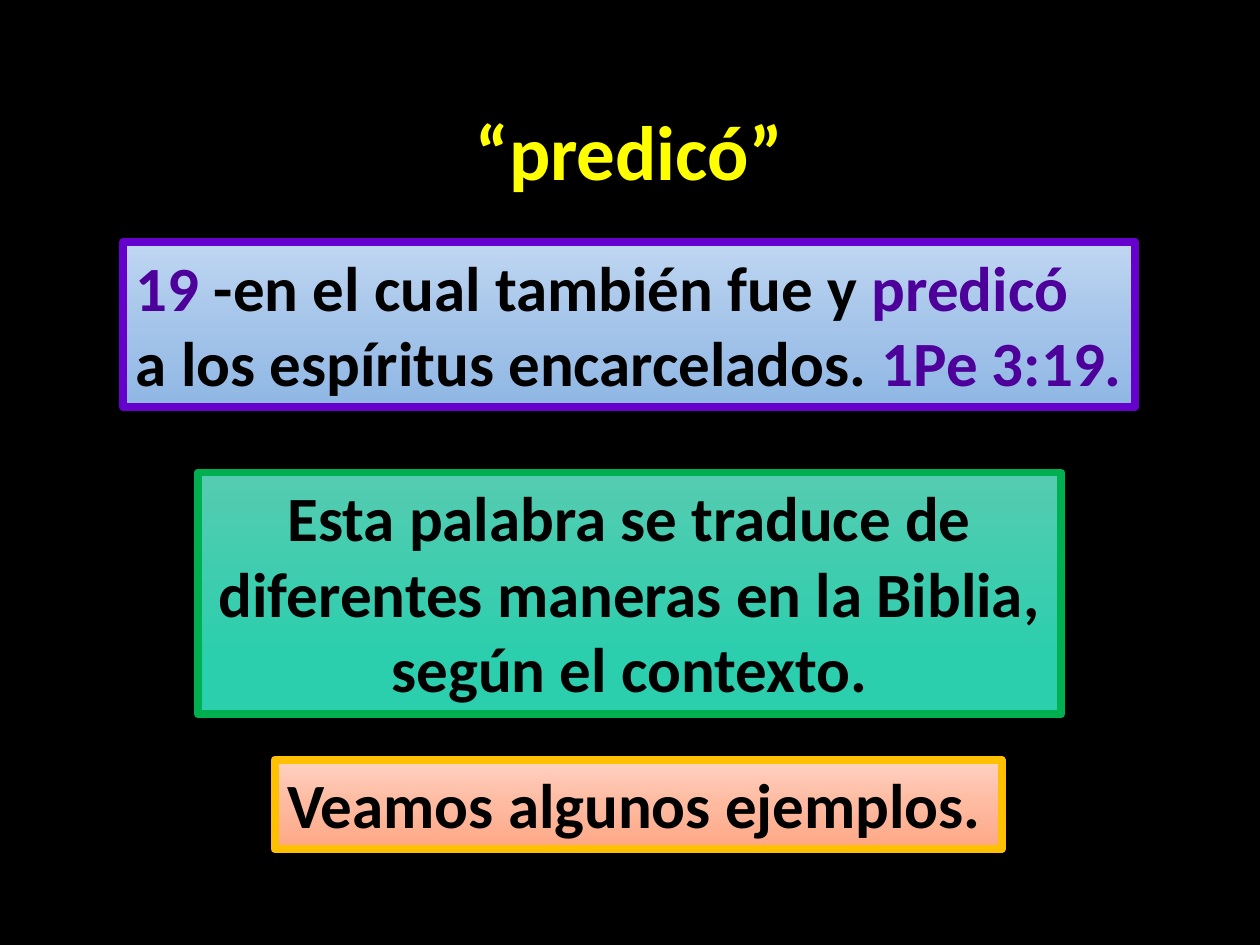
from lxml.etree import SubElement
from pptx import Presentation
from pptx.dml.color import RGBColor
from pptx.enum.shapes import MSO_SHAPE
from pptx.enum.text import MSO_ANCHOR, MSO_AUTO_SIZE, PP_ALIGN
from pptx.oxml.ns import qn
from pptx.util import Inches, Pt

BLACK = "000000"
PURPLE = "6600CC"
DARK_PURPLE = "4D009A"
YELLOW = "FFFF00"


def color(value):
    """Return the colour of a hex string."""
    return RGBColor.from_string(value)


def add_solid_fill(parent, value):
    """Append a solid fill element to parent."""
    fill = SubElement(parent, qn("a:solidFill"))
    SubElement(fill, qn("a:srgbClr"), val=value)


def outline_run(run, value):
    """Draw a thin outline around the letters of a run."""
    properties = run._r.get_or_add_rPr()
    line = SubElement(properties, qn("a:ln"), w=str(Pt(0.75)))
    add_solid_fill(line, value)
    properties.insert(0, line)


def add_text(paragraph, text, size=36, fill=BLACK, outline=None):
    """Add a bold outlined run to a paragraph."""
    run = paragraph.add_run()
    run.text = text
    run.font.name = "Calibri"
    run.font.size = Pt(size)
    run.font.bold = True
    run.font.color.rgb = color(fill)
    outline_run(run, outline or fill)


def set_gradient(shape, stops):
    """Fill a shape from top to bottom with (percent, colour) stops."""
    shape.fill.gradient()
    shape.fill.gradient_angle = 270
    stop_list = shape._element.spPr.find(qn("a:gradFill")).find(qn("a:gsLst"))
    for old_stop in list(stop_list):
        stop_list.remove(old_stop)
    for percent, value in stops:
        stop = SubElement(stop_list, qn("a:gs"), pos=str(percent * 1000))
        SubElement(stop, qn("a:srgbClr"), val=value)


def add_box(slide, left, top, width, height, stops, border, paragraphs,
            align=PP_ALIGN.LEFT, wrap=True):
    """Add a bordered gradient box; each paragraph is a list of (text, format)."""
    shape = slide.shapes.add_shape(
        MSO_SHAPE.RECTANGLE, Inches(left), Inches(top), Inches(width), Inches(height))
    shape.shadow.inherit = False
    set_gradient(shape, stops)
    shape.line.color.rgb = color(border)
    shape.line.width = Pt(4.5)
    SubElement(shape.line._get_or_add_ln(), qn("a:round"))
    frame = shape.text_frame
    frame.word_wrap = wrap
    frame.auto_size = MSO_AUTO_SIZE.SHAPE_TO_FIT_TEXT
    frame.vertical_anchor = MSO_ANCHOR.TOP
    for index, runs in enumerate(paragraphs):
        paragraph = frame.add_paragraph() if index else frame.paragraphs[0]
        paragraph.alignment = align
        for text, text_format in runs:
            add_text(paragraph, text, **text_format)


def set_title(slide, text):
    """Place and format the title placeholder."""
    title = slide.shapes.title
    title.left, title.top = Inches(3.06), Inches(0.77)
    title.width, title.height = Inches(3.87), Inches(0.84)
    title.text_frame.vertical_anchor = MSO_ANCHOR.TOP
    paragraph = title.text_frame.paragraphs[0]
    paragraph.alignment = PP_ALIGN.CENTER
    add_text(paragraph, text, size=44, fill=YELLOW)


def main():
    """Build and save the slide."""
    presentation = Presentation()
    presentation.slide_width = Inches(10)
    presentation.slide_height = Inches(7.5)
    slide = presentation.slides.add_slide(presentation.slide_layouts[5])
    slide.background.fill.solid()
    slide.background.fill.fore_color.rgb = color(BLACK)
    set_title(slide, "“predicó”")

    accent = {"fill": DARK_PURPLE, "outline": PURPLE}
    add_box(slide, 0.98, 1.92, 8.03, 1.31,
            [(0, "BFD6F2"), (52, "A4C4E9"), (100, "8FB7E4")], PURPLE,
            [[("19", accent), (" -en el cual también fue y ", {}), ("predicó", accent)],
             [("a los espíritus encarcelados. ", {}), ("1Pe 3:19.", accent)]])
    add_box(slide, 1.57, 3.75, 6.85, 1.92,
            [(0, "55CCB1"), (78, "2BCEAD")], "00B050",
            [[("Esta palabra se traduce de diferentes maneras en la Biblia, "
               "según el contexto.", {})]],
            align=PP_ALIGN.CENTER)
    add_box(slide, 2.18, 6.03, 5.77, 0.71,
            [(0, "FFD2C2"), (52, "FEB99F"), (100, "FEA785")], "FFC000",
            [[("Veamos algunos ejemplos.", {})]], wrap=False)
    presentation.save("out.pptx")


if __name__ == "__main__":
    main()
